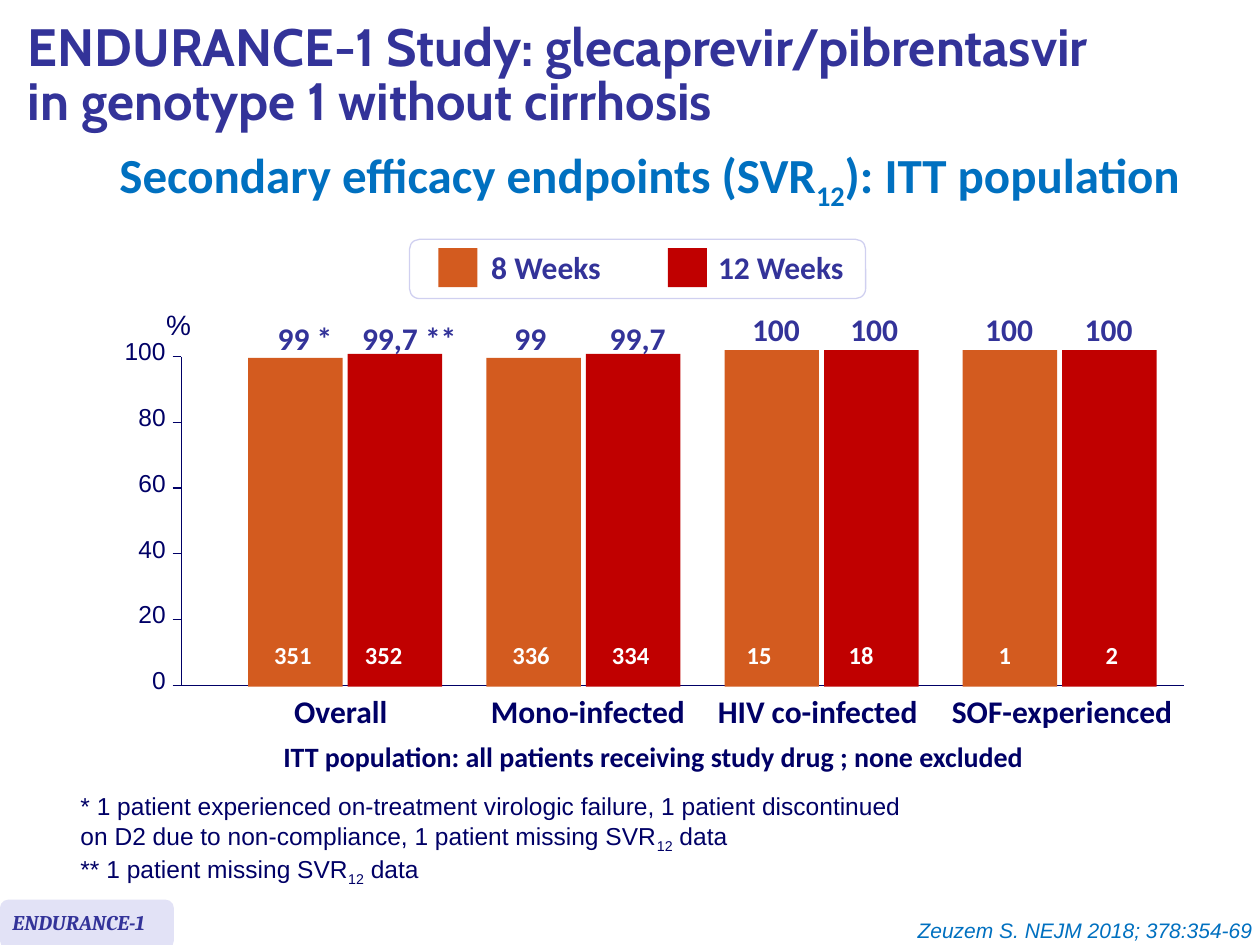
"""Build the ENDURANCE-1 slide on secondary efficacy endpoints."""
from lxml.etree import SubElement
from pptx import Presentation
from pptx.dml.color import RGBColor
from pptx.enum.shapes import MSO_CONNECTOR as Link, MSO_SHAPE as Shape
from pptx.enum.text import MSO_ANCHOR as Anchor, MSO_AUTO_SIZE as Fit, PP_ALIGN as Align
from pptx.oxml.ns import qn
from pptx.util import Inches, Pt

COLORS = {"title": "333399", "accent": "0070C0", "ink": "000066", "white": "FFFFFF",
          "tag": "E2E2F6", "border": "D0D0F0", "8 Weeks": "D35B1F", "12 Weeks": "C00000"}

TITLE = "ENDURANCE-1 Study: glecaprevir/pibrentasvir \nin genotype 1 without cirrhosis"
SUBTITLE = "Secondary efficacy endpoints (SVR|12|): ITT population"
POPULATION = "ITT population: all patients receiving study drug ; none excluded"
NOTES = ("* 1 patient experienced on-treatment virologic failure, 1 patient discontinued on D2 "
         "due to non-compliance, 1 patient missing SVR|12| data\n"
         "** 1 patient missing SVR|12| data")
REFERENCE = "Zeuzem S. NEJM 2018; 378:354-69"

# name, name box (left, width), bars of (label, label shift, label width, count, count shift)
GROUPS = [
    ("Overall", (2.23, 0.95),
     [("99 *", 0.08, 0.64, "351", -0.02), ("99,7 **", 0.12, 0.96, "352", -0.09)]),
    ("Mono-infected", (3.79, 1.75),
     [("99", -0.02, 0.46, "336", -0.02), ("99,7", 0.04, 0.65, "334", -0.02)]),
    ("HIV co-infected", (5.59, 1.8),
     [("100", 0.04, 0.59, "15", -0.1), ("100", 0.03, 0.59, "18", -0.08)]),
    ("SOF-experienced", (7.45, 1.96),
     [("100", 0, 0.59, "1", -0.04), ("100", 0, 0.59, "2", 0.02)]),
]
LEGEND = [("8 Weeks", 3.48, 3.8, 1.09), ("12 Weeks", 5.3, 5.6, 1.22)]
HEIGHTS = {"99": 2.61, "99,7": 2.64, "100": 2.67}
TICK_WIDTHS = {0: 0.31, 20: 0.42, 40: 0.42, 60: 0.42, 80: 0.42, 100: 0.53}
AXIS_X, AXIS_Y, AXIS_HEIGHT, TICK_X = 1.44, 5.44, 2.61, 1.37
FIRST_BAR, GROUP_STEP, BAR_STEP, BAR_WIDTH, BAR_BOTTOM = 1.97, 1.89, 0.79, 0.75, 5.45

deck = Presentation()
deck.slide_width, deck.slide_height = Inches(10), Inches(7.5)
page = deck.slides.add_slide(deck.slide_layouts[5])


def color(name):
    return RGBColor.from_string(COLORS[name])


def write(text, left, top, width, height, box=None, size=18, font="Calibri", ink="ink",
          bold=True, italic=False, align=Align.LEFT, wrap=False, spacing=None,
          anchor=Anchor.TOP, fit=Fit.SHAPE_TO_FIT_TEXT):
    """Write text, where bars enclose subscripts and newlines break lines."""
    box = box or page.shapes.add_textbox(0, 0, 0, 0)
    box.left, box.top, box.width, box.height = map(Inches, (left, top, width, height))
    frame = box.text_frame
    frame.word_wrap, frame.auto_size, frame.vertical_anchor = wrap, fit, anchor
    para = frame.paragraphs[0]
    para.alignment, para.line_spacing = align, spacing
    for row, line in enumerate(text.split("\n")):
        if row:
            para.add_line_break()
        for index, piece in enumerate(line.split("|")):
            span = para.add_run()
            span.text = piece
            span.font.size, span.font.name = Pt(size), font
            span.font.bold, span.font.italic = bold, italic
            span.font.color.rgb = color(ink)
            if index % 2:
                span.font._element.set("baseline", "-25000")


def block(left, top, width, height, fill, kind=Shape.RECTANGLE, border=None):
    shape = page.shapes.add_shape(kind, *map(Inches, (left, top, width, height)))
    shape.shadow.inherit = False
    shape.fill.solid()
    shape.fill.fore_color.rgb = color(fill)
    if border:
        shape.line.color.rgb, shape.line.width = color(border), Pt(0.75)
    else:
        shape.line.fill.background()


def rule(x1, y1, x2, y2):
    line = page.shapes.add_connector(Link.STRAIGHT, *map(Inches, (x1, y1, x2, y2)))
    line.line.color.rgb, line.line.width = color("ink"), Pt(0.75)
    SubElement(line._element.spPr, qn("a:effectLst"))


def draw_text():
    write(TITLE, 0.12, 0.08, 9.88, 1.07, box=page.shapes.title, size=30, font="Cabin",
          ink="title", wrap=True, spacing=0.85, anchor=Anchor.MIDDLE, fit=Fit.NONE)
    block(0, 7.14, 1.38, 0.39, "tag", Shape.ROUNDED_RECTANGLE)
    write("ENDURANCE-1", 0, 7.17, 1.38, 0.3, size=12, font="Cambria", ink="title",
          italic=True, wrap=True)
    write(SUBTITLE, 0.43, 1.42, 9.45, 0.36, size=28, ink="accent", align=Align.CENTER,
          wrap=True, spacing=Pt(15.2))
    write(NOTES, 0.54, 6.23, 6.91, 0.81, size=14, font="Arial", bold=False, wrap=True)
    write(POPULATION, 2.15, 5.82, 6.85, 0.37, size=16, wrap=True)
    write(REFERENCE, 6.61, 7.23, 3.43, 0.3, size=12, font="Arial", ink="accent",
          bold=False, italic=True, align=Align.RIGHT, wrap=True)


def draw_legend():
    block(3.25, 1.9, 3.62, 0.47, "white", Shape.ROUNDED_RECTANGLE, "border")
    for name, key_left, left, width in LEGEND:
        block(key_left, 1.97, 0.31, 0.31, name)
        write(name, left, 1.92, width, 0.4, ink="title")


def draw_axes():
    rule(AXIS_X, AXIS_Y - AXIS_HEIGHT, AXIS_X, AXIS_Y)
    for value, width in TICK_WIDTHS.items():
        y = AXIS_Y - AXIS_HEIGHT * value / 100
        rule(TICK_X, y, AXIS_X if value else 9.4, y)
        write(str(value), 1.42 - width, y - 0.21, width, 0.34, size=14, font="Arial",
              bold=False)
    write("%", 1.22, 2.39, 0.4, 0.37, size=16, font="Arial", bold=False)


def draw_bars():
    for group, (name, (name_left, name_width), bars) in enumerate(GROUPS):
        for index, (label, shift, width, count, count_shift) in enumerate(bars):
            left = FIRST_BAR + group * GROUP_STEP + index * BAR_STEP
            center = left + BAR_WIDTH / 2
            value = label.split()[0]
            height = HEIGHTS[value]
            block(left, BAR_BOTTOM - height, BAR_WIDTH, height, LEGEND[index][0])
            write(label, center + shift - width / 2, 2.41 if value == "100" else 2.48,
                  width, 0.4 if group == 0 else 0.35, ink="title")
            count_width = 0.2 + 0.1 * len(count)
            write(count, center + count_shift - count_width / 2, 5.03, count_width, 0.34,
                  size=14, ink="white", align=Align.CENTER)
        write(name, name_left, AXIS_Y, name_width, 0.4, align=Align.CENTER)


draw_text()
draw_legend()
draw_axes()
draw_bars()
deck.save("out.pptx")
